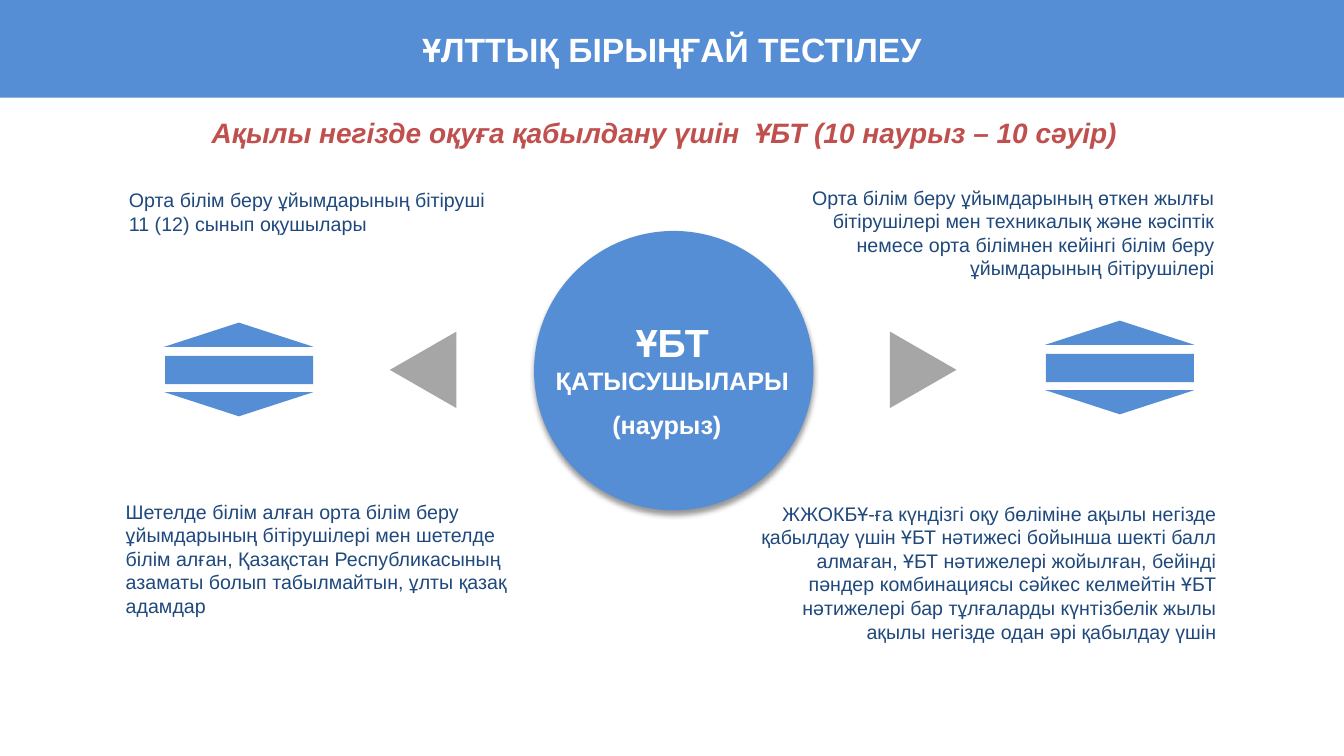
"""Builds the slide about participants of the unified national testing."""
from lxml.etree import SubElement
from pptx import Presentation
from pptx.dml.color import RGBColor
from pptx.enum.shapes import MSO_SHAPE
from pptx.enum.text import MSO_ANCHOR, PP_ALIGN
from pptx.oxml.ns import qn
from pptx.util import Cm, Pt

COLORS = {
    "blue": "558ED5",
    "gray": "A6A6A6",
    "navy": "1F497D",
    "red": "C0504D",
    "white": "FFFFFF",
    "shadow": "000000",
}
PAGE_WIDTH, PAGE_HEIGHT = 33.87, 19.05


class SlideBuilder:
    def __init__(self, page, font_name="Arial"):
        self.page = page
        self.font_name = font_name

    def shape(self, kind, left, top, width, height, color="blue", rotation=0):
        shape = self.page.shapes.add_shape(
            kind, Cm(left), Cm(top), Cm(width), Cm(height))
        shape.shadow.inherit = False
        shape.fill.solid()
        shape.fill.fore_color.rgb = RGBColor.from_string(COLORS[color])
        shape.line.fill.background()
        shape.rotation = rotation
        return shape

    def text_box(self, left, top, width, height, anchor=MSO_ANCHOR.TOP):
        box = self.page.shapes.add_textbox(Cm(left), Cm(top), Cm(width), Cm(height))
        box.text_frame.word_wrap = True
        box.text_frame.vertical_anchor = anchor
        return box

    def fill_para(self, para, spans, color, align=PP_ALIGN.LEFT, bold=False, italic=False):
        para.alignment = align
        font = para.font
        font.name = self.font_name
        font.bold = bold
        font.italic = italic
        font.color.rgb = RGBColor.from_string(COLORS[color])
        sizes = {size for _, size in spans}
        if len(sizes) == 1:
            font.size = Pt(sizes.pop())
        for text, size in spans:
            span = para.add_run()
            span.text = text
            if font.size is None:
                span.font.size = Pt(size)

    def banner(self, text, height):
        band = self.shape(MSO_SHAPE.RECTANGLE, 0, 0, PAGE_WIDTH, height)
        band.text_frame.vertical_anchor = MSO_ANCHOR.MIDDLE
        self.fill_para(band.text_frame.paragraphs[0], [(text, 24)], "white",
                       PP_ALIGN.CENTER, bold=True)

    def subtitle(self, text, *place):
        box = self.text_box(*place)
        self.fill_para(box.text_frame.paragraphs[0], [(text, 20)], "red",
                       PP_ALIGN.CENTER, bold=True, italic=True)

    def description(self, text, align, *place):
        box = self.text_box(*place)
        self.fill_para(box.text_frame.paragraphs[0], [(text, 14)], "navy", align)

    def hub(self, left, top, diameter):
        circle = self.shape(MSO_SHAPE.OVAL, left, top, diameter, diameter)
        effects = circle._element.spPr.find(qn("a:effectLst"))
        shadow = SubElement(effects, qn("a:outerShdw"), blurRad=str(Pt(4)),
                            dist=str(Pt(3)), dir="5400000", rotWithShape="0")
        tint = SubElement(shadow, qn("a:srgbClr"), val=COLORS["shadow"])
        SubElement(tint, qn("a:alpha"), val="40000")

    def hub_label(self, lines, *place):
        frame = self.text_box(*place, anchor=MSO_ANCHOR.MIDDLE).text_frame
        for index, spans in enumerate(lines):
            para = frame.add_paragraph() if index else frame.paragraphs[0]
            self.fill_para(para, spans, "white", PP_ALIGN.CENTER, bold=True)

    def pointer(self, left, rotation):
        self.shape(MSO_SHAPE.ISOSCELES_TRIANGLE, left, 8.48, 1.93, 1.68, "gray", rotation)

    def split_hexagon(self, left, top):
        self.shape(MSO_SHAPE.RECTANGLE, left + 0.02, top + 0.84, 3.73, 0.71)
        for offset, rotation in ((0, 0), (1.75, 180)):
            self.shape(MSO_SHAPE.ISOSCELES_TRIANGLE, left, top + offset, 3.76, 0.61,
                       rotation=rotation)


def main():
    deck = Presentation()
    deck.slide_width, deck.slide_height = Cm(PAGE_WIDTH), Cm(PAGE_HEIGHT)
    builder = SlideBuilder(deck.slides.add_slide(deck.slide_layouts[6]))

    builder.banner("ҰЛТТЫҚ БІРЫҢҒАЙ ТЕСТІЛЕУ", 2.46)
    builder.subtitle("Ақылы негізде оқуға қабылдану үшін  ҰБТ (10 наурыз – 10 сәуір) ",
                     3.45, 2.79, 26.8, 1.12)

    builder.hub(13.46, 5.82, 7.04)
    builder.hub_label([[("ҰБТ ", 28), ("ҚАТЫСУШЫЛАРЫ", 18)],
                       [("(наурыз)", 18), (" ", 28)]],
                      13.54, 7.87, 6.81, 3.43)

    for left, rotation in ((9.7, 270), (22.3, 90)):
        builder.pointer(left, rotation)
    for left, top in ((4.14, 8.13), (26.34, 8.08)):
        builder.split_hexagon(left, top)

    descriptions = [
        ("Орта білім беру ұйымдарының бітіруші 11 (12) сынып оқушылары",
         PP_ALIGN.LEFT, 3, 4.62, 9.93, 1.45),
        ("Шетелде білім алған орта білім беру ұйымдарының бітірушілері мен "
         "шетелде білім алған, Қазақстан Республикасының азаматы болып "
         "табылмайтын, ұлты қазақ адамдар",
         PP_ALIGN.LEFT, 2.92, 12.47, 11, 3.25),
        ("Орта білім беру ұйымдарының өткен жылғы бітірушілері мен техникалық "
         "және кәсіптік немесе орта білімнен кейінгі білім беру ұйымдарының "
         "бітірушілері",
         PP_ALIGN.RIGHT, 19.53, 4.55, 11.33, 2.64),
        ("ЖЖОКБҰ-ға күндізгі оқу бөліміне ақылы негізде қабылдау үшін ҰБТ "
         "нәтижесі бойынша шекті балл алмаған, ҰБТ нәтижелері жойылған, "
         "бейінді пәндер комбинациясы сәйкес келмейтін ҰБТ нәтижелері бар "
         "тұлғаларды күнтізбелік жылы ақылы негізде одан әрі қабылдау үшін",
         PP_ALIGN.RIGHT, 18.92, 12.52, 11.99, 3.84),
    ]
    for text, align, *place in descriptions:
        builder.description(text, align, *place)

    deck.save("out.pptx")


if __name__ == "__main__":
    main()
